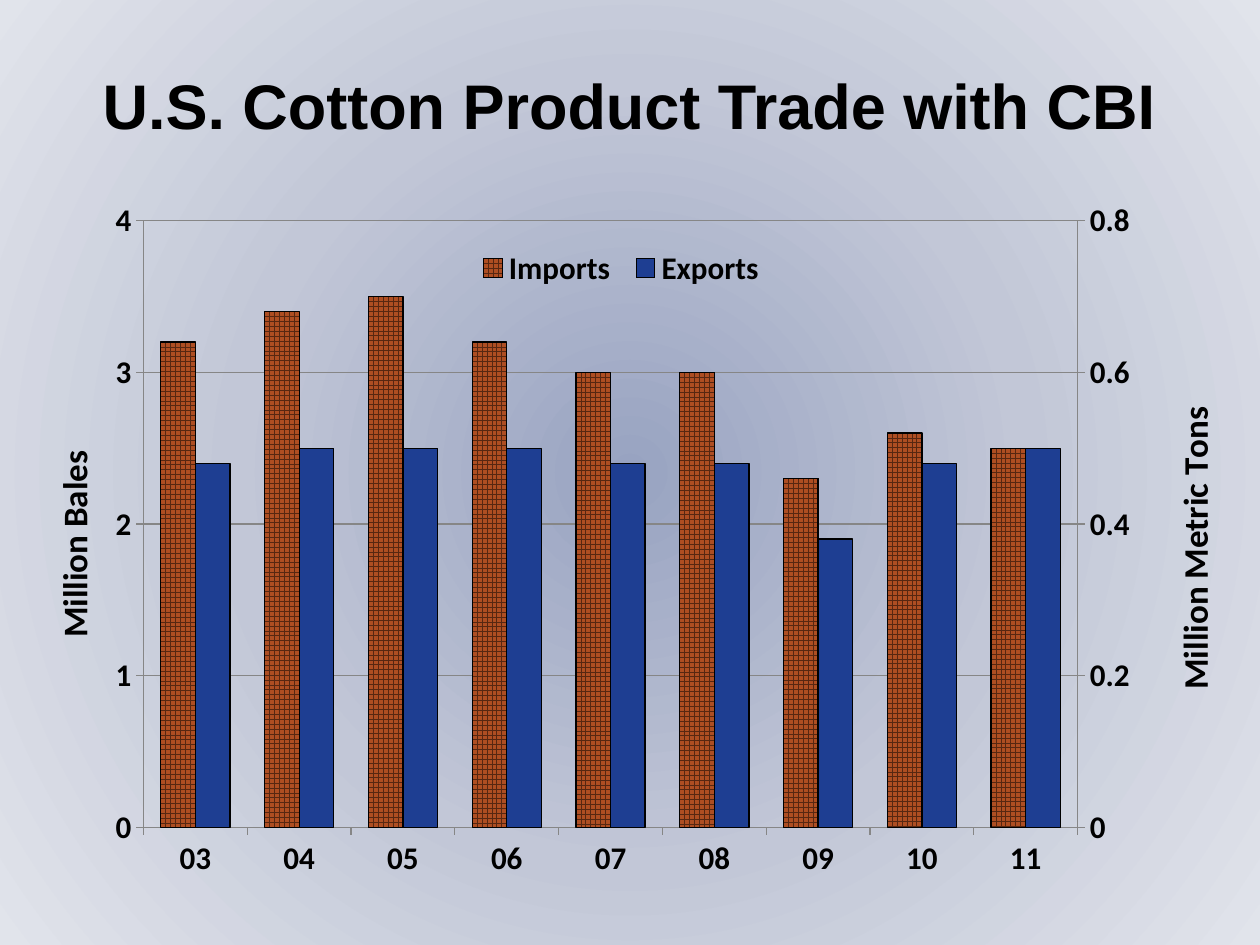
from copy import deepcopy

from pptx import Presentation
from pptx.chart.axis import ValueAxis
from pptx.chart.data import CategoryChartData
from pptx.dml.color import RGBColor
from pptx.enum.chart import XL_CHART_TYPE as ChartType, XL_LEGEND_POSITION as LegendPos
from pptx.enum.chart import XL_TICK_LABEL_POSITION as LabelPos, XL_TICK_MARK as Tick
from pptx.enum.dml import MSO_PATTERN as Pattern
from pptx.enum.text import MSO_ANCHOR as Anchor, PP_ALIGN as Align
from pptx.oxml import parse_xml
from pptx.oxml.ns import nsdecls, qn
from pptx.util import Inches, Pt

COLORS = {
    "text": "000000", "grid": "868686",
    "import_lines": "572711", "imports": "AE4E22", "exports": "1E3E92",
}
BACKGROUND = [(0, "98A3C1"), (50, "C2C7D7"), (100, "E1E4EB")]

YEARS = ["03", "04", "05", "06", "07", "08", "09", "10", "11"]
TRADE = {
    "Imports": [3.2, 3.4, 3.5, 3.2, 3, 3, 2.3, 2.6, 2.5],
    "Exports": [2.4, 2.5, 2.5, 2.5, 2.4, 2.4, 1.9, 2.4, 2.5],
    # Metric series carry the right axis and have no fill
    "Series 3": [0.7, 0.75, 0.75, 0.7, 0.66, 0.64, 0.5, 0.56, 0.55],
    "Series 4": [0.53, 0.54, 0.53, 0.54, 0.52, 0.53, 0.41, 0.53, 0.55],
}


def rgb(name):
    return RGBColor.from_string(COLORS[name])


def write(frame, text, size, font="Calibri", align=Align.CENTER):
    """Put one bold paragraph into a text frame."""
    paragraph = frame.paragraphs[0]
    paragraph.alignment = align
    run = paragraph.add_run()
    run.text = text
    run.font.size, run.font.name, run.font.bold = Pt(size), font, True
    run.font.color.rgb = rgb("text")


def place(element, x, y, w=None, h=None, inner=False):
    """Give a chart part a manual layout in fractions of the chart."""
    for old in element.findall(qn("c:layout")):
        element.remove(old)
    parts = [("layoutTarget", "inner")] if inner else []
    parts += [("xMode", "edge"), ("yMode", "edge"), ("x", x), ("y", y)]
    parts += [(key, value) for key, value in (("w", w), ("h", h)) if value]
    body = "".join(f'<c:{key} val="{value}"/>' for key, value in parts)
    layout = parse_xml(f'<c:layout {nsdecls("c")}><c:manualLayout>{body}'
                       '</c:manualLayout></c:layout>')
    overlay = element.find(qn("c:overlay"))
    if overlay is None:
        element.insert(0, layout)
    else:
        overlay.addprevious(layout)


def set_val(element, tag, value):
    element.find(qn(tag)).set("val", str(value))


class Deck:
    def __init__(self):
        self.prs = Presentation()
        self.prs.slide_width, self.prs.slide_height = Inches(10), Inches(7.5)
        self.slide = self.prs.slides.add_slide(self.prs.slide_layouts[6])

    def background(self, stops):
        gradient = "".join(f'<a:gs pos="{pos * 1000}"><a:srgbClr val="{color}"/></a:gs>'
                           for pos, color in stops)
        self.slide.element.cSld.insert(0, parse_xml(
            f'<p:bg {nsdecls("p", "a")}><p:bgPr><a:gradFill rotWithShape="1">'
            f'<a:gsLst>{gradient}</a:gsLst><a:path path="circle">'
            '<a:fillToRect l="50000" t="50000" r="50000" b="50000"/></a:path>'
            '</a:gradFill><a:effectLst/></p:bgPr></p:bg>'))

    def heading(self, text, x, y, w, h):
        frame = self.slide.shapes.add_textbox(
            Inches(x), Inches(y), Inches(w), Inches(h)).text_frame
        frame.word_wrap, frame.vertical_anchor = True, Anchor.MIDDLE
        write(frame, text, 36, "Arial")

    def columns(self, years, series, x, y, w, h):
        data = CategoryChartData()
        data.categories = years
        for name, values in series.items():
            data.add_series(name, values)
        chart = self.slide.shapes.add_chart(
            ChartType.COLUMN_CLUSTERED, Inches(x), Inches(y), Inches(w), Inches(h), data).chart
        chart.has_title = False
        chart.font.size, chart.font.name, chart.font.bold = Pt(18), "Calibri", True
        chart.font.color.rgb = rgb("text")
        plot = chart.plots[0]
        plot.gap_width, plot.overlap, plot.vary_by_categories = 100, 0, False
        place(plot._element.getparent(), 0.095, 0.097, 0.792, 0.804, inner=True)
        return chart

    def axis_title(self, axis, text, x, y):
        axis.has_title = True
        title = axis.axis_title
        write(title.text_frame, text, 20)
        body = title._element.find(".//" + qn("a:bodyPr"))
        body.set("rot", "-5400000")
        body.set("vert", "horz")
        place(title._element, x, y)

    def axis(self, axis, top=None, step=None, number_format=None):
        axis.major_tick_mark, axis.minor_tick_mark = Tick.OUTSIDE, Tick.NONE
        axis.format.line.color.rgb = rgb("grid")
        if top:
            axis.minimum_scale, axis.maximum_scale, axis.major_unit = 0, top, step
            axis.tick_labels.number_format = number_format
            axis.tick_labels.number_format_is_linked = False

    def right_axis(self, chart, first):
        """Move the series from index `first` on to a second value axis."""
        bars = chart.plots[0]._element
        years, bales = chart.category_axis._element, chart.value_axis._element
        right_bars, right_years, tons = (deepcopy(part) for part in (bars, years, bales))
        for group, kept in ((bars, range(first)), (right_bars, range(first, 4))):
            for index, entry in enumerate(group.findall(qn("c:ser"))):
                if index not in kept:
                    group.remove(entry)
        for ref, number in zip(right_bars.findall(qn("c:axId")), (501, 502)):
            ref.set("val", str(number))
        for part, own, other in ((right_years, 501, 502), (tons, 502, 501)):
            set_val(part, "c:axId", own)
            set_val(part, "c:crossAx", other)
        set_val(right_years, "c:delete", 1)
        set_val(tons, "c:axPos", "r")
        set_val(tons, "c:crosses", "max")
        bars.addnext(right_bars)
        bales.addnext(tons)
        tons.addnext(right_years)
        axis = ValueAxis(tons)
        axis.has_major_gridlines = False
        return axis

    def legend(self, chart, hidden, *box):
        chart.has_legend = True
        legend = chart.legend
        legend.position, legend.include_in_layout = LegendPos.TOP, True
        position = legend._element.find(qn("c:legendPos"))
        for index in reversed(hidden):
            position.addnext(parse_xml(
                f'<c:legendEntry {nsdecls("c")}><c:idx val="{index}"/>'
                '<c:delete val="1"/></c:legendEntry>'))
        place(legend._element, *box)


def main():
    deck = Deck()
    deck.background(BACKGROUND)
    deck.heading("U.S. Cotton Product Trade with CBI", 0.25, 0.33, 9.49, 1)
    chart = deck.columns(YEARS, TRADE, 0.25, 1.17, 9.49, 5.99)

    # Series colours
    imports, exports, *metric = chart.plots[0].series
    weave = imports.format.fill
    weave.patterned()
    weave.pattern = Pattern.LARGE_GRID
    weave.fore_color.rgb, weave.back_color.rgb = rgb("import_lines"), rgb("imports")
    exports.format.fill.solid()
    exports.format.fill.fore_color.rgb = rgb("exports")
    for visible in (imports, exports):
        visible.format.line.color.rgb = rgb("text")
        visible.format.line.width = Pt(0.75)
    for unseen in metric:
        unseen.format.fill.background()
        unseen.format.line.fill.background()

    # Axes
    years, bales = chart.category_axis, chart.value_axis
    deck.axis(years)
    years.tick_label_position = LabelPos.LOW
    deck.axis(bales, 4, 1, "#,##0")
    bales.has_major_gridlines = True
    bales.major_gridlines.format.line.color.rgb = rgb("grid")
    tons = deck.right_axis(chart, first=2)
    deck.axis(tons, 0.8, 0.2, "General")
    deck.axis_title(bales, "Million Bales", 0.01, 0.39)
    deck.axis_title(tons, "Million Metric Tons", 0.96, 0.33)

    # Legend with the metric series hidden
    deck.legend(chart, [2, 3], 0.37, 0.13, 0.26, 0.06)
    deck.prs.save("out.pptx")


if __name__ == "__main__":
    main()
